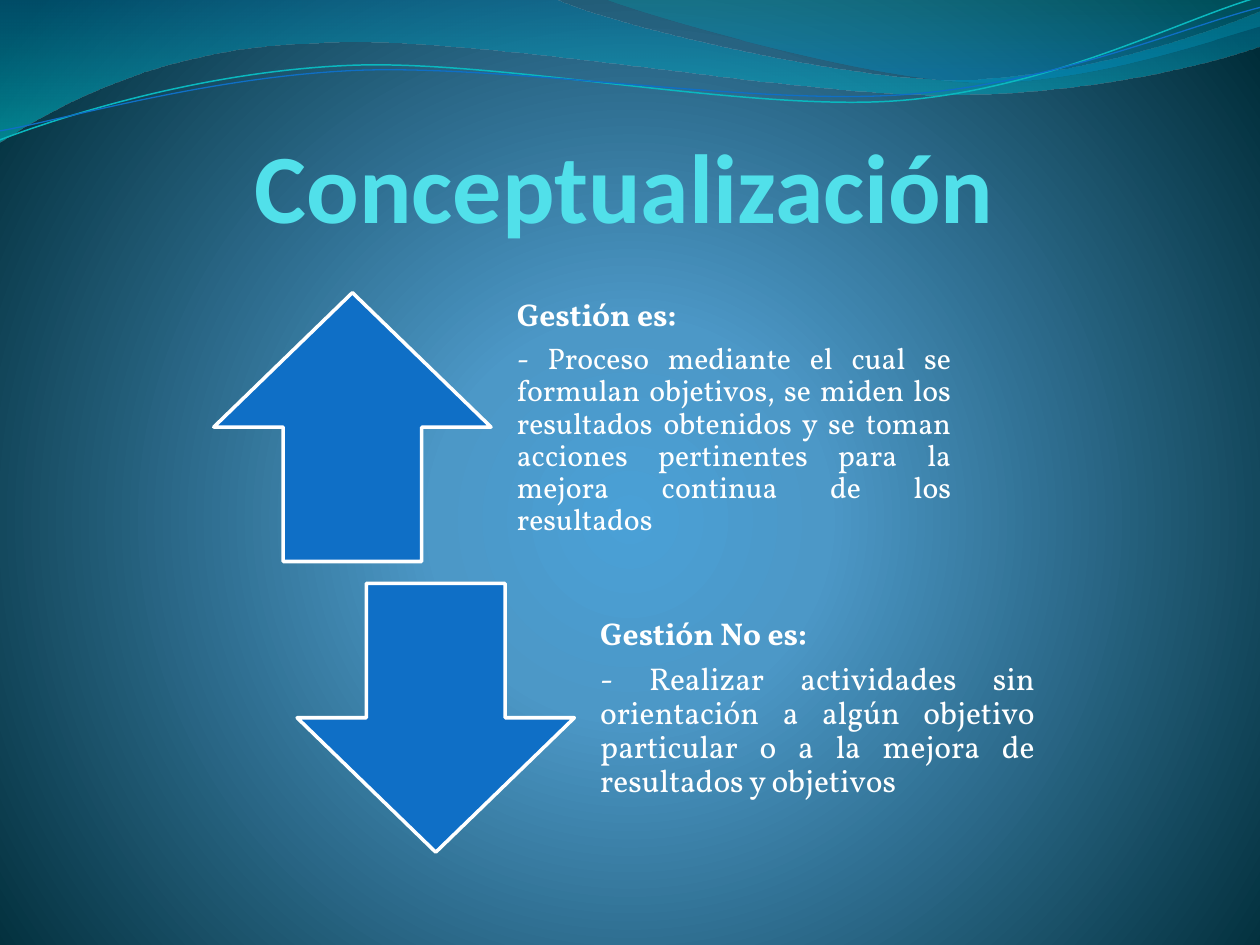
from dataclasses import dataclass
from math import cos, radians, sin

from lxml.etree import SubElement
from pptx import Presentation
from pptx.dml.color import RGBColor
from pptx.enum.shapes import MSO_SHAPE
from pptx.enum.text import MSO_ANCHOR, MSO_AUTO_SIZE, PP_ALIGN
from pptx.oxml.ns import qn
from pptx.util import Cm, Pt


@dataclass(frozen=True)
class Theme:
    title_font: str = "Calibri"
    body_font: str = "Vollkorn"
    title_size: float = 56
    heading_size: float = 18
    title: str = "51E0EA"
    text: str = "FFFFFF"
    arrow: str = "0F6FC6"
    wave_line: str = "0AB8BF"
    # Gradient stops: position, colour, opacity (all in percent)
    background: tuple = ((0, "4AA0D6", 100), (25, "4C98C7", 100), (100, "002C38", 100))
    long_band: tuple = ((0, "0074A1", 45), (100, "00C6CF", 55))
    short_band: tuple = ((0, "00A1A9", 30), (80, "008BBF", 45))


THEME = Theme()
LINE_TILT = -2.7  # degrees

# Wave outlines in cm: a pair is a line end, six numbers are a cubic curve
LONG_BAND = [
    (0, 0), (11.18, -0.03),
    (12.09, 0.43, 16.87, 1.6, 19.25, 1.6), (21.67, 1.6, 24.33, 0.66, 25.4, 0.23),
    (25.43, 0.91),
    (24.97, 1.12, 22.1, 1.93, 18.95, 1.91), (15.8, 1.91, 9.7, 0.71, 6.53, 0.86),
    (3.28, 0.91, 1.17, 2.11, -0.03, 2.87), (0, 0),
]
SHORT_BAND = [
    (12.17, -0.03),
    (12.93, 0.28, 17.32, 1.57, 19.53, 1.65), (21.74, 1.75, 24.41, 0.81, 25.4, 0.53),
    (25.4, 0), (12.17, -0.03),
]
UPPER_LINE = [
    (0, 2.82),
    (1.22, 2.36, 4.01, 1.45, 7.04, 1.32), (10.03, 1.19, 15.06, 2.26, 18.11, 2.03),
    (21.16, 1.8, 23.83, 0.38, 25.35, -0.05),
]
LOWER_LINE = [
    (0, 2.64),
    (1.19, 2.44, 4.17, 1.55, 7.19, 1.42), (10.24, 1.3, 15.16, 2.13, 18.21, 1.91),
    (21.23, 1.7, 23.9, 0.53, 25.4, 0.15),
]


def set_gradient(element, stops, focus=None):
    """Rewrite a gradient: vertical, or circular around the focus rectangle."""
    gradient = element.find(".//" + qn("a:gradFill"))
    for child in list(gradient):
        gradient.remove(child)
    stop_list = SubElement(gradient, qn("a:gsLst"))
    for position, color, opacity in stops:
        stop = SubElement(stop_list, qn("a:gs"), pos=str(position * 1000))
        color_element = SubElement(stop, qn("a:srgbClr"), val=color)
        if opacity < 100:
            SubElement(color_element, qn("a:alpha"), val=str(opacity * 1000))
    if focus:
        circle = SubElement(gradient, qn("a:path"), path="circle")
        edges = {side: str(value * 1000) for side, value in zip("ltrb", focus)}
        SubElement(circle, qn("a:fillToRect"), **edges)
    else:
        SubElement(gradient, qn("a:lin"), ang="5400000", scaled="1")


def place(shape, left, top, width, height):
    shape.left, shape.top, shape.width, shape.height = map(Cm, (left, top, width, height))


def to_box(x, y, box, rotation):
    """Give a slide point in the coordinates of a box turned about its centre."""
    left, top, width, height = box
    angle = radians(-rotation)
    across, down = x - left - width / 2, y - top - height / 2
    return (across * cos(angle) - down * sin(angle) + width / 2,
            across * sin(angle) + down * cos(angle) + height / 2)


def add_wave(slide, outline, box, closed=False, rotation=0):
    """Build a freeform on its corner points, then bend the sides into curves."""
    corners = [(Cm(segment[-2]), Cm(segment[-1])) for segment in outline]
    builder = slide.shapes.build_freeform(*corners[0])
    builder.add_line_segments(corners[1:], close=closed)
    shape = builder.convert_to_shape()
    shape.shadow.inherit = False
    place(shape, *box)
    shape.rotation = rotation

    outline_path = shape.element.find(".//" + qn("a:pathLst"))[0]
    outline_path.set("w", str(Cm(box[2])))
    outline_path.set("h", str(Cm(box[3])))
    for command, segment in zip(list(outline_path), outline):
        if len(segment) == 6:
            command.tag_name = None
            curve = SubElement(outline_path, qn("a:cubicBezTo"))
            outline_path.replace(command, curve)
            command = curve
        for child in list(command):
            command.remove(child)
        for x, y in zip(segment[::2], segment[1::2]):
            across, down = to_box(x, y, box, rotation)
            SubElement(command, qn("a:pt"), x=str(Cm(across)), y=str(Cm(down)))
    return shape


def add_waves(slide):
    for outline, box, stops in (
            (LONG_BAND, (-0.03, -0.03, 25.45, 2.9), THEME.long_band),
            (SHORT_BAND, (12.17, -0.03, 13.23, 1.78), THEME.short_band)):
        band = add_wave(slide, outline, box, closed=True)
        band.line.fill.background()
        band.fill.gradient()
        set_gradient(band.element, stops)
    for outline, box, color, width in (
            (UPPER_LINE, (-0.05, 0.56, 25.45, 1.8), THEME.wave_line, 0.85),
            (LOWER_LINE, (-0.05, 0.76, 25.48, 1.47), THEME.arrow, 0.75)):
        wave = add_wave(slide, outline, box, rotation=LINE_TILT)
        wave.fill.background()
        wave.line.color.rgb = RGBColor.from_string(color)
        wave.line.width = Pt(width)


def set_frame(text_frame, anchor, margins):
    text_frame.word_wrap = True
    text_frame.auto_size = MSO_AUTO_SIZE.NONE
    text_frame.vertical_anchor = anchor
    (text_frame.margin_left, text_frame.margin_top,
     text_frame.margin_right, text_frame.margin_bottom) = map(Cm, margins)


def format_paragraph(paragraph, font_name, size, color, bold, alignment):
    paragraph.alignment = alignment
    for run in paragraph.runs:
        run.font.name = font_name
        run.font.size = Pt(size)
        run.font.bold = bold
        run.font.color.rgb = RGBColor.from_string(color)


def add_title(title, text, box):
    place(title, *box)
    title.text_frame.text = text
    set_frame(title.text_frame, MSO_ANCHOR.BOTTOM, (0, 0, 0.05, 0))
    format_paragraph(title.text_frame.paragraphs[0], THEME.title_font,
                     THEME.title_size, THEME.title, True, PP_ALIGN.CENTER)


def add_concept(slide, body, arrow_kind, heading, description, size, text_height, box):
    """Arrow on the left of the box, heading and description on the right."""
    left, top, width, height = box
    arrow_width, text_offset = 5.59, 5.75
    arrow = slide.shapes.add_shape(
        arrow_kind, Cm(left), Cm(top), Cm(arrow_width), Cm(height))
    arrow.shadow.inherit = False
    arrow.fill.solid()
    arrow.fill.fore_color.rgb = RGBColor.from_string(THEME.arrow)
    arrow.line.color.rgb = RGBColor.from_string(THEME.text)
    arrow.line.width = Pt(2)

    place(body, left + text_offset, top + (height - text_height) / 2,
          width - text_offset, text_height)
    slide.shapes.element.append(body.element)  # in front of its arrow
    text_frame = body.text_frame
    set_frame(text_frame, MSO_ANCHOR.MIDDLE, (0.36, 0, 0.36, 0.36))
    text_frame.text = f"{heading}\n{description}"
    styles = ((THEME.heading_size, True, PP_ALIGN.LEFT), (size, False, PP_ALIGN.JUSTIFY))
    for paragraph, (font_size, bold, alignment) in zip(text_frame.paragraphs, styles):
        format_paragraph(paragraph, THEME.body_font, font_size, THEME.text, bold, alignment)
        paragraph.line_spacing = 0.9
        paragraph.space_before = Pt(0)
        paragraph.space_after = Pt(6)
        # No bullet and no hanging indent
        properties = paragraph._p.get_or_add_pPr()
        properties.set("marL", "0")
        properties.set("indent", "0")
        SubElement(properties, qn("a:buNone"))


def main():
    presentation = Presentation()
    presentation.slide_width, presentation.slide_height = Cm(25.4), Cm(19.05)
    slide = presentation.slides.add_slide(presentation.slide_layouts[3])
    title, first_body, second_body = slide.placeholders

    # Background and decoration
    slide.background.fill.gradient()
    set_gradient(slide.element, THEME.background, focus=(10, 110, 10, 100))
    add_waves(slide)

    # Content
    slide.shapes.element.append(title.element)  # in front of the waves
    add_title(title, "Conceptualización", (1.19, 1.73, 22.86, 3.18))
    add_concept(slide, first_body, MSO_SHAPE.UP_ARROW, "Gestión es:",
                "- Proceso mediante el cual se formulan objetivos, se miden los resultados "
                "obtenidos y se toman acciones pertinentes para la mejora continua de los "
                "resultados", 17, 5.42, (4.31, 5.9, 15.23, 5.42))
    add_concept(slide, second_body, MSO_SHAPE.DOWN_ARROW, "Gestión No es:",
                "- Realizar actividades sin orientación a algún objetivo particular o a la "
                "mejora de resultados y objetivos", 18, 6.35, (5.99, 11.76, 15.23, 5.42))
    presentation.save("out.pptx")


if __name__ == "__main__":
    main()
